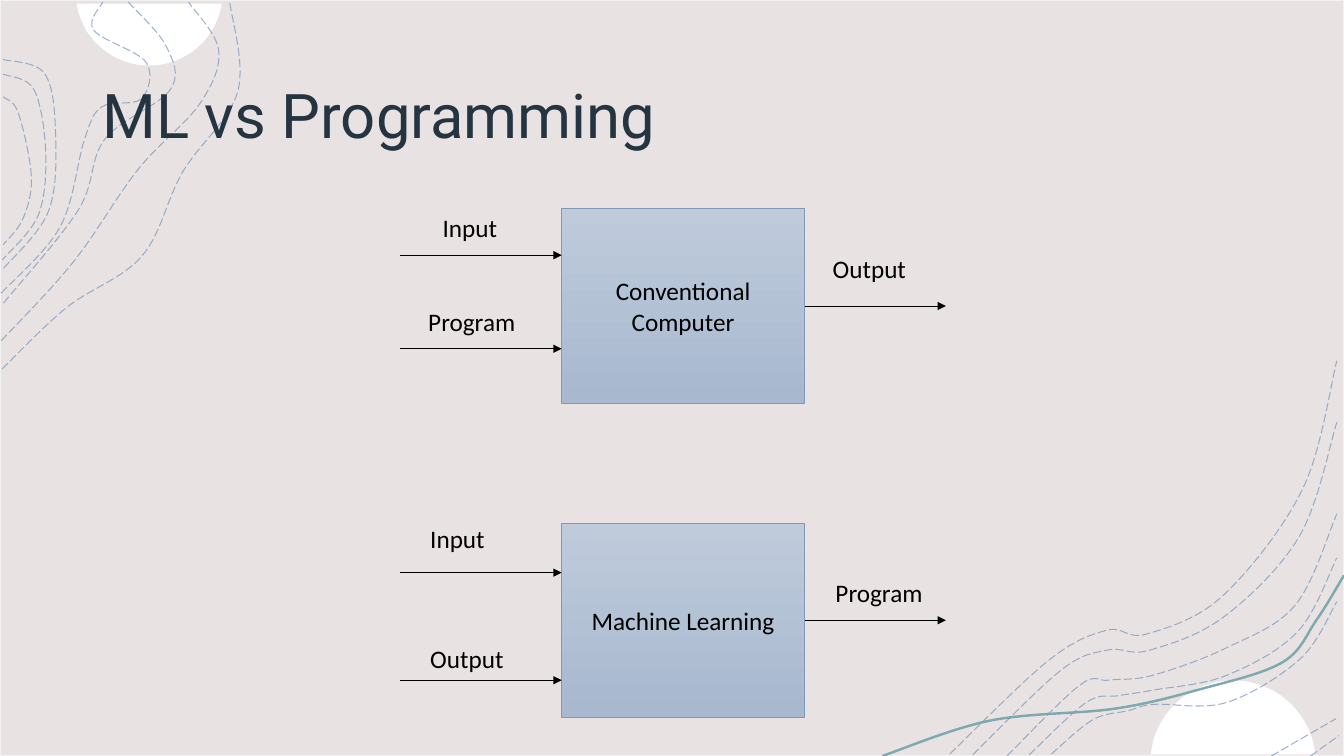
"""Builds the slide comparing machine learning with conventional programming."""
from dataclasses import dataclass
from math import cos, pi, sin

from lxml.etree import SubElement
from pptx import Presentation
from pptx.dml.color import RGBColor as Rgb
from pptx.enum.dml import MSO_LINE as Dash
from pptx.enum.shapes import MSO_CONNECTOR as Link, MSO_SHAPE as Preset
from pptx.enum.text import MSO_ANCHOR as Anchor, PP_ALIGN as Align
from pptx.oxml.ns import qn
from pptx.util import Cm, Pt


@dataclass(frozen=True)
class Theme:
    """Colours, fonts and sizes in points."""
    paper: str = "E8E3E2"
    frame: str = "F2F2F2"
    disc: str = "FFFFFF"
    contour: str = "7F99BA"
    ribbon: str = "7EA9B0"
    box_top: str = "BFCBDB"
    box_bottom: str = "A7B8CF"
    title: str = "243441"
    ink: str = "000000"
    title_font: str = "Roboto"
    body_font: str = "Calibri"
    title_size: float = 44
    body_size: float = 18
    thin: float = 0.5
    contour_width: float = 0.75
    ribbon_width: float = 1.75


THEME = Theme()
WIDTH, HEIGHT = 13.33, 7.5
TITLE = ("ML vs Programming", (0.92, 0.4, 11.5, 1.45))
BOX_LEFT, BOX_WIDTH, BOX_HEIGHT = 5.57, 2.41, 1.93
INPUT_LENGTH, OUTPUT_LENGTH, LABEL_HEIGHT = 1.6, 1.4, 0.4
LABEL_WIDTHS = {"Input": 0.8, "Program": 1.18, "Output": 1.03}
SYSTEMS = [
    {"name": "Conventional Computer", "top": 2.07, "arrows_in": [2.53, 3.46],
     "labels": [("Input", 4.29, 2.06), ("Program", 4.15, 2.99), ("Output", 8.16, 2.47)]},
    {"name": "Machine Learning", "top": 5.19, "arrows_in": [5.68, 6.75],
     "labels": [("Input", 4.17, 5.14), ("Output", 4.17, 6.33), ("Program", 8.19, 5.68)]},
]
DISCS = [(1.48, -0.08, 0.73), (12.23, 7.57, 0.82)]
RIBBON = [(8.75, 7.5), (9.82, 7.15), (11.05, 7.03), (11.9, 6.84), (12.72, 6.57),
          (13.06, 6.15), (13.33, 5.71)]
SINGLE_CONTOURS = [
    [(0.02, 3.66), (0.66, 3.05), (1.41, 2.54), (1.81, 1.71), (2.36, 0.91), (2.28, 0.02)],
    [(0.01, 3.38), (0.73, 2.6), (1.37, 1.68), (1.98, 1.03), (2.17, 0.5), (1.87, 0.02)],
    [(1.27, 0.02), (1.65, 0.46), (1.69, 0.89), (1.04, 1.38), (0.78, 2.08), (0.03, 3.01)],
    [(0.01, 2.91), (0.6, 2.25), (0.84, 1.38), (1.01, 1.06), (1.4, 0.98), (1.45, 0.62),
     (0.93, 0.3), (1.02, 0.02)],
    [(13, 7.5), (13.28, 7.3)],
    [(12.61, 7.5), (13.25, 7.13)],
]
LEFT_OUTER = [(0.03, 0.59), (0.44, 0.73), (0.55, 1.32), (0.48, 2.1), (0.02, 2.68)]
LEFT_INNER = [(0.03, 0.96), (0.18, 1.12), (0.31, 1.75), (0.23, 2.17), (0.03, 2.43)]
RIGHT_OUTER = [(9.42, 7.48), (10.4, 6.55), (10.98, 6.25), (11.37, 6.29), (12.13, 5.91),
               (12.92, 4.85), (13.26, 3.58)]
RIGHT_MIDDLE = [(9.99, 7.5), (10.71, 6.8), (11, 6.75), (11.43, 6.7), (12.16, 6.43),
                (12.85, 6), (13.26, 5.1)]
RIGHT_INNER = [(10.43, 7.48), (10.84, 7.14), (11.19, 7.05), (11.45, 6.99), (12.17, 6.97),
               (12.9, 6.53), (13.26, 5.97)]
BLENDED_CONTOURS = [
    (LEFT_OUTER, LEFT_INNER, (0, 0.4, 1)),
    (RIGHT_OUTER, RIGHT_MIDDLE, (0, 0.4)),
    (RIGHT_MIDDLE, RIGHT_INNER, (0, 0.5, 1)),
]


def inches(*lengths):
    return [Cm(round(length * 2.54, 2)) for length in lengths]


def blend(outer, inner, share):
    return [tuple(a + (b - a) * share for a, b in zip(*pair)) for pair in zip(outer, inner)]


def stroke(line, colour, width):
    line.color.rgb = Rgb.from_string(colour)
    line.width = Pt(width)


def fill_with(shape, colour):
    shape.fill.solid()
    shape.fill.fore_color.rgb = Rgb.from_string(colour)


def outline(shapes, points, close=False):
    corners = [tuple(inches(*point)) for point in points]
    builder = shapes.build_freeform(*corners[0])
    builder.add_line_segments(corners[1:], close=close)
    shape = builder.convert_to_shape()
    shape.shadow.inherit = False
    return shape


def curve(shapes, points, colour, width):
    shape = outline(shapes, points)
    shape.fill.background()
    stroke(shape.line, colour, width)
    knots = [(int(knot.get("x")), int(knot.get("y"))) for knot in shape._element.iter(qn("a:pt"))]
    padded = [knots[0], *knots, knots[-1]]
    for index, segment in enumerate(list(shape._element.iter(qn("a:lnTo")))):
        before, start, end, after = padded[index:index + 4]
        handles = [[s + (e - b) / 6 for b, s, e in zip(before, start, end)],
                   [e - (a - s) / 6 for s, e, a in zip(start, end, after)]]
        bend = segment.makeelement(qn("a:cubicBezTo"))
        for x, y in [*handles, end]:
            SubElement(bend, qn("a:pt"), x=str(round(x)), y=str(round(y)))
        segment.getparent().replace(segment, bend)
    return shape


def write(shape, words, font, size, colour, align=Align.LEFT, wrap=True, anchor=Anchor.MIDDLE):
    frame = shape.text_frame
    frame.text = words
    frame.word_wrap = wrap
    frame.vertical_anchor = anchor
    frame.paragraphs[0].alignment = align
    style = frame.paragraphs[0].runs[0].font
    style.name, style.size, style.color.rgb = font, Pt(size), Rgb.from_string(colour)


def arrow(shapes, left, length, y):
    connector = shapes.add_connector(Link.STRAIGHT, *inches(left, y, left + length, y))
    stroke(connector.line, THEME.ink, THEME.thin)
    SubElement(connector.line._get_or_add_ln(), qn("a:tailEnd"), type="triangle")
    SubElement(connector._element.spPr, qn("a:effectLst"))


def draw_backdrop(shapes):
    paper = shapes.add_shape(Preset.RECTANGLE, *inches(0, 0, WIDTH, HEIGHT))
    paper.shadow.inherit = False
    fill_with(paper, THEME.paper)
    stroke(paper.line, THEME.frame, 1)
    for x, y, radius in DISCS:
        rim = [(x + radius * cos(pi * step / 60), y + radius * sin(pi * step / 60))
               for step in range(120)]
        disc = outline(shapes, [point for point in rim if 0 <= point[1] <= HEIGHT], close=True)
        fill_with(disc, THEME.disc)
        disc.line.fill.background()
    curve(shapes, RIBBON, THEME.ribbon, THEME.ribbon_width)
    blended = [blend(outer, inner, share)
               for outer, inner, shares in BLENDED_CONTOURS for share in shares]
    for points in SINGLE_CONTOURS + blended:
        contour = curve(shapes, points, THEME.contour, THEME.contour_width)
        contour.line.dash_style = Dash.LONG_DASH
        tint = contour.line._get_or_add_ln().find(".//" + qn("a:srgbClr"))
        SubElement(tint, qn("a:alpha"), val="75000")


def draw_system(shapes, system):
    top = system["top"]
    box = shapes.add_shape(Preset.RECTANGLE, *inches(BOX_LEFT, top, BOX_WIDTH, BOX_HEIGHT))
    box.shadow.inherit = False
    box.fill.gradient()
    box.fill.gradient_angle = 270
    for stop, colour in zip(box.fill.gradient_stops, (THEME.box_top, THEME.box_bottom)):
        stop.color.rgb = Rgb.from_string(colour)
    stroke(box.line, THEME.contour, THEME.thin)
    body = (THEME.body_font, THEME.body_size, THEME.ink)
    write(box, system["name"], *body, align=Align.CENTER)
    for y in system["arrows_in"]:
        arrow(shapes, BOX_LEFT - INPUT_LENGTH, INPUT_LENGTH, y)
    arrow(shapes, BOX_LEFT + BOX_WIDTH, OUTPUT_LENGTH, top + BOX_HEIGHT / 2)
    for words, left, y in system["labels"]:
        label = shapes.add_textbox(*inches(left, y, LABEL_WIDTHS[words], LABEL_HEIGHT))
        write(label, words, *body, wrap=False, anchor=Anchor.TOP)


def main():
    deck = Presentation()
    deck.slide_width, deck.slide_height = inches(WIDTH, HEIGHT)
    shapes = deck.slides.add_slide(deck.slide_layouts[6]).shapes
    draw_backdrop(shapes)
    words, place = TITLE
    write(shapes.add_textbox(*inches(*place)), words, THEME.title_font, THEME.title_size, THEME.title)
    for system in SYSTEMS:
        draw_system(shapes, system)
    deck.save("out.pptx")


if __name__ == "__main__":
    main()
